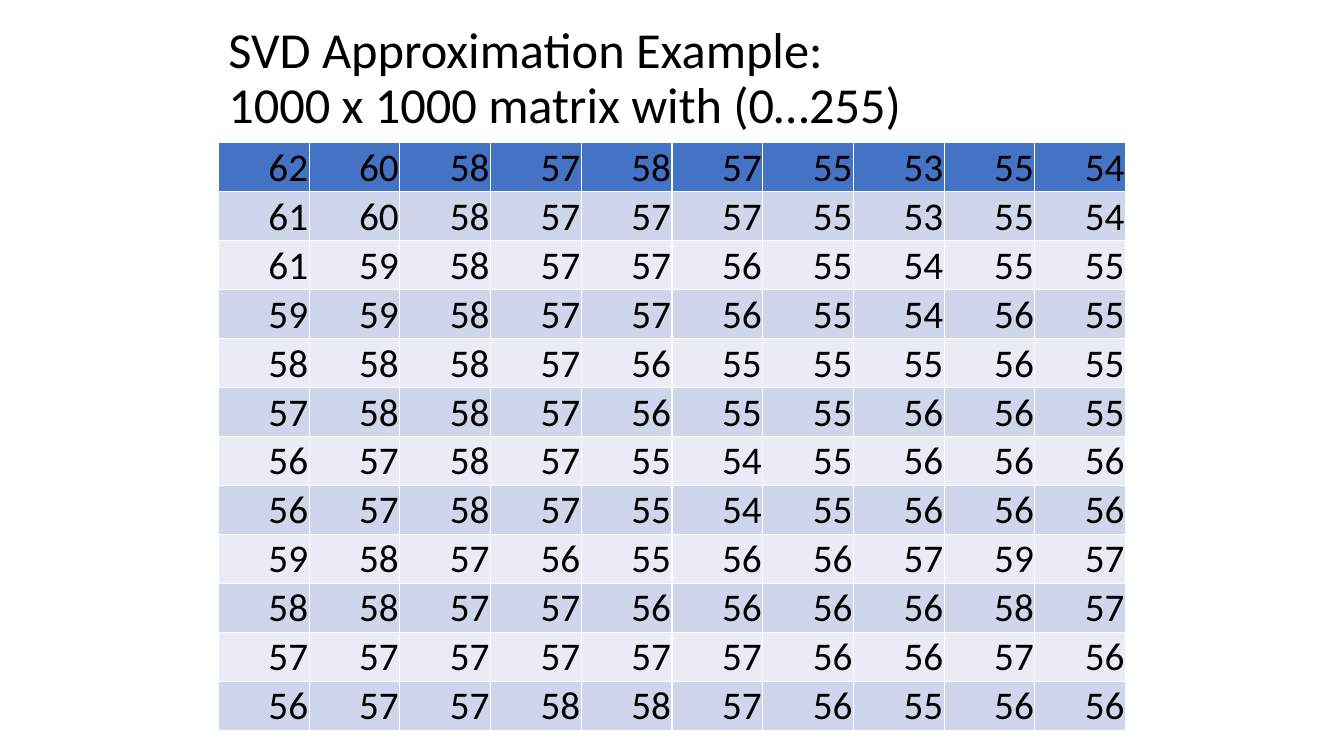
import dataclasses

import lxml.etree
import pptx
import pptx.dml.color
import pptx.enum.text
import pptx.oxml.ns
import pptx.slide
import pptx.table
import pptx.text.text
import pptx.util

UNITS_PER_INCH = 12
Align = pptx.enum.text.PP_ALIGN
Anchor = pptx.enum.text.MSO_ANCHOR


@dataclasses.dataclass(frozen=True)
class Theme:
    font: str = "Calibri"
    ink: str = "000000"
    header: str = "4472C4"
    bands: tuple[str, str] = ("CFD5EA", "E9EBF5")
    border: str = "FFFFFF"
    title_size: int = 36
    value_size: int = 28
    border_width: int = 1


@dataclasses.dataclass(frozen=True)
class Area:
    column: int
    row: int
    columns: int
    rows: int

    def lengths(self) -> tuple[pptx.util.Length, ...]:
        return tuple(grid(units) for units in dataclasses.astuple(self))


THEME = Theme()
SLIDE = Area(0, 0, 160, 90)
TITLE = Area(26, 2, 108, 15)
MATRIX = Area(26, 17, 108, 70)
TITLE_TEXT = "SVD Approximation Example:\n1000 x 1000 matrix with (0…255)"
VALUES = [
    [62, 60, 58, 57, 58, 57, 55, 53, 55, 54],
    [61, 60, 58, 57, 57, 57, 55, 53, 55, 54],
    [61, 59, 58, 57, 57, 56, 55, 54, 55, 55],
    [59, 59, 58, 57, 57, 56, 55, 54, 56, 55],
    [58, 58, 58, 57, 56, 55, 55, 55, 56, 55],
    [57, 58, 58, 57, 56, 55, 55, 56, 56, 55],
    [56, 57, 58, 57, 55, 54, 55, 56, 56, 56],
    [56, 57, 58, 57, 55, 54, 55, 56, 56, 56],
    [59, 58, 57, 56, 55, 56, 56, 57, 59, 57],
    [58, 58, 57, 57, 56, 56, 56, 56, 58, 57],
    [57, 57, 57, 57, 57, 57, 56, 56, 57, 56],
    [56, 57, 57, 58, 58, 57, 56, 55, 56, 56],
]


def grid(units: float) -> pptx.util.Length:
    return pptx.util.Inches(units / UNITS_PER_INCH)


def color(code: str) -> pptx.dml.color.RGBColor:
    return pptx.dml.color.RGBColor.from_string(code)


def write_text(frame: pptx.text.text.TextFrame, text: str, *, size: int,
               align: Align = Align.LEFT, spacing: float = 1.0) -> None:
    para = frame.paragraphs[0]
    para.text = text.replace("\n", "\v")
    para.alignment = align
    para.line_spacing = spacing
    for span in para.runs:
        span.font.name = THEME.font
        span.font.size = pptx.util.Pt(size)
        span.font.bold = False
        span.font.color.rgb = color(THEME.ink)


def add_border(cell: pptx.table._Cell, side: str) -> None:
    name = pptx.oxml.ns.qn
    properties = cell._tc.get_or_add_tcPr()
    width = str(pptx.util.Pt(THEME.border_width))
    line = lxml.etree.SubElement(properties, name(f"a:ln{side}"), w=width)
    fill = lxml.etree.SubElement(line, name("a:solidFill"))
    lxml.etree.SubElement(fill, name("a:srgbClr"), val=THEME.border)


def format_cell(cell: pptx.table._Cell, value: int, row: int) -> None:
    for side in "LRTB":
        add_border(cell, side)
    cell.fill.solid()
    cell.fill.fore_color.rgb = color(THEME.bands[(row - 1) % 2] if row else THEME.header)
    cell.margin_left = cell.margin_right = cell.margin_top = pptx.util.Inches(0.01)
    cell.margin_bottom = 0
    cell.vertical_anchor = Anchor.BOTTOM
    write_text(cell.text_frame, str(value), size=THEME.value_size, align=Align.RIGHT)


def add_title(page: pptx.slide.Slide) -> None:
    box = page.shapes.add_textbox(*TITLE.lengths())
    box.text_frame.word_wrap = True
    box.text_frame.vertical_anchor = Anchor.MIDDLE
    write_text(box.text_frame, TITLE_TEXT, size=THEME.title_size, spacing=0.9)


def add_matrix(page: pptx.slide.Slide) -> None:
    table = page.shapes.add_table(len(VALUES), len(VALUES[0]), *MATRIX.lengths()).table
    for column in table.columns:
        column.width = grid(MATRIX.columns / len(VALUES[0]))
    for index, values in enumerate(VALUES):
        table.rows[index].height = grid(MATRIX.rows / len(VALUES))
        for cell, value in zip(table.rows[index].cells, values):
            format_cell(cell, value, index)


def main() -> None:
    deck = pptx.Presentation()
    deck.slide_width = grid(SLIDE.columns)
    deck.slide_height = grid(SLIDE.rows)
    page = deck.slides.add_slide(deck.slide_layouts[6])
    add_title(page)
    add_matrix(page)
    deck.save("out.pptx")


if __name__ == "__main__":
    main()
